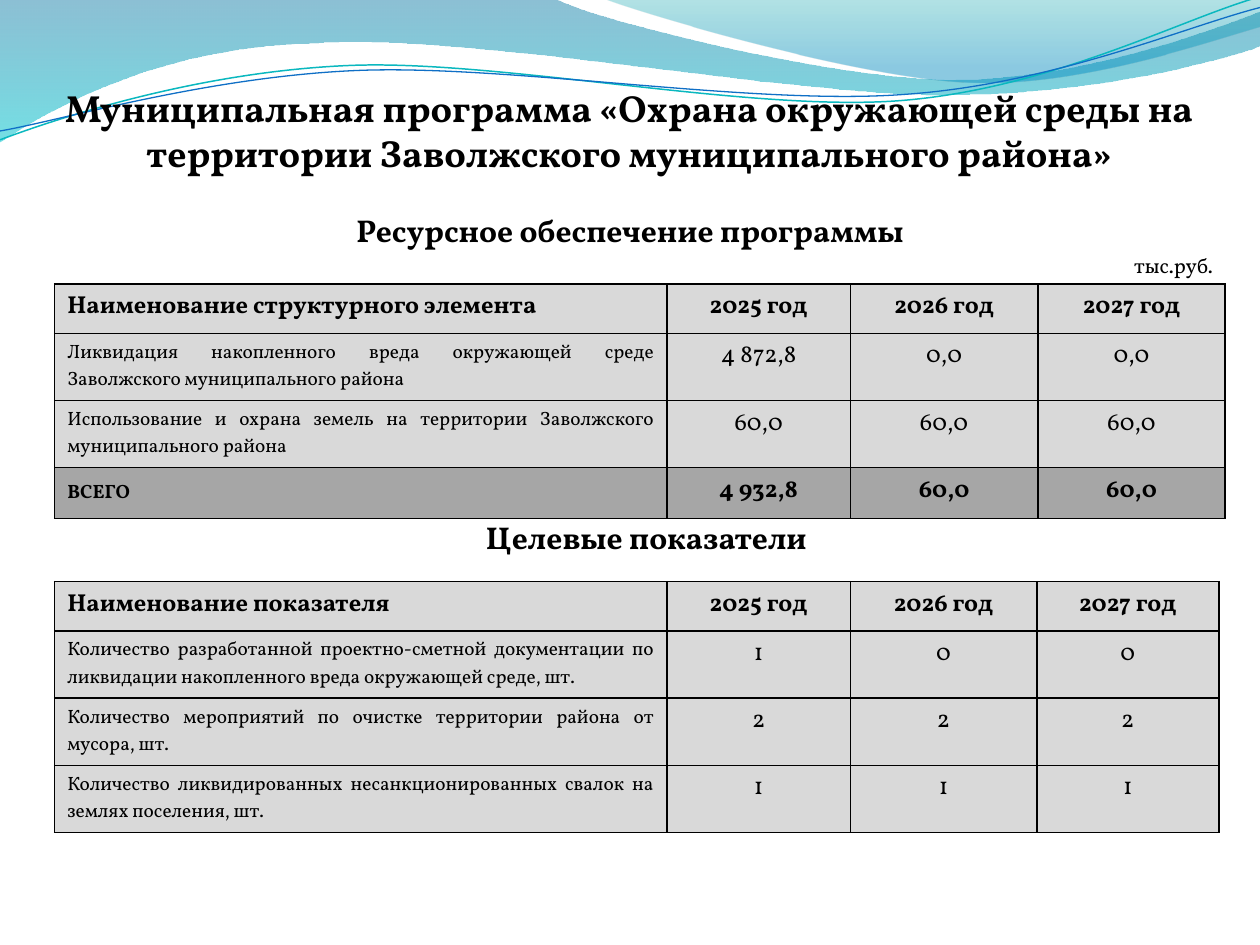
import math

from lxml import etree
from pptx import Presentation
from pptx import util as u
from pptx.dml.color import RGBColor
from pptx.enum import text
from pptx.oxml.ns import qn

COLS, ROWS = 100, 75  # slide grid
FONT, BLACK, GREY, DARK_GREY = "Vollkorn", "000000", "D9D9D9", "A6A6A6"
LEFT, CENTER, RIGHT, JUSTIFY = (text.PP_ALIGN.LEFT, text.PP_ALIGN.CENTER,
                                text.PP_ALIGN.RIGHT, text.PP_ALIGN.JUSTIFY)


def rgb(value):
    return RGBColor.from_string(value)


def sub(parent, tag, **attrs):
    return etree.SubElement(parent, qn(tag), {k: str(v) for k, v in attrs.items()})


def turn(point, center, degrees):
    """Point turned clockwise about a center."""
    a = math.radians(degrees)
    dx, dy = point[0] - center[0], point[1] - center[1]
    return (center[0] + dx * math.cos(a) - dy * math.sin(a),
            center[1] + dx * math.sin(a) + dy * math.cos(a))


class Deck:
    def __init__(self):
        self.prs = Presentation()
        self.prs.slide_width, self.prs.slide_height = u.Inches(10), u.Inches(7.5)
        self.s = self.prs.slides.add_slide(self.prs.slide_layouts[6])

    def x(self, cols):
        return round(self.prs.slide_width * cols / COLS)

    def y(self, rows):
        return round(self.prs.slide_height * rows / ROWS)

    def box(self, left, top, width, height):
        return self.x(left), self.y(top), self.x(width), self.y(height)

    def style(self, p, size, bold=True, align=CENTER):
        p.alignment = align
        f = p.font
        f.name, f.size, f.bold = FONT, u.Pt(size), bold
        f.color.rgb = rgb(BLACK)

    def wave(self, start, *segments, gradient=None, line=None, tilt=0, center=(0, 0)):
        """Two numbers in a segment make a line, six make a curve."""
        def place(seg):
            pairs = [turn(p, center, -tilt) for p in zip(seg[::2], seg[1::2])]
            return [(self.x(a), self.y(b)) for a, b in pairs]

        parts = [place(seg) for seg in segments]
        fb = self.s.shapes.build_freeform(*place(start)[0])
        fb.add_line_segments([part[-1] for part in parts], close=gradient is not None)
        sp = fb.convert_to_shape()
        sp.shadow.inherit = False
        pr = sp._element.spPr
        for step, part in zip(list(pr.iter(qn("a:lnTo"))), parts):
            if len(part) == 3:  # bend the straight step into a curve
                curve = etree.Element(qn("a:cubicBezTo"))
                for a, b in part:
                    sub(curve, "a:pt", x=a - sp.left, y=b - sp.top)
                step.getparent().replace(step, curve)
        sp.rotation = tilt
        sp.fill.background()
        if gradient:
            sp.line.fill.background()
            fill = etree.Element(qn("a:gradFill"), rotWithShape="1")
            stops = sub(fill, "a:gsLst")
            for pos, color, alpha in gradient:
                stop = sub(stops, "a:gs", pos=pos * 1000)
                sub(sub(stop, "a:srgbClr", val=color), "a:alpha", val=alpha * 1000)
            sub(fill, "a:lin", ang=5400000, scaled=0)
            pr.replace(pr.find(qn("a:noFill")), fill)
        else:
            color, width = line
            sp.line.color.rgb, sp.line.width = rgb(color), u.Pt(width)

    def text(self, place, *paragraphs, anchor=text.MSO_ANCHOR.TOP, inset=0.1,
             bottom=0.05, wrap=True):
        tf = self.s.shapes.add_textbox(*self.box(*place)).text_frame
        tf.word_wrap, tf.vertical_anchor = wrap, anchor
        tf.margin_left = tf.margin_right = u.Inches(inset)
        tf.margin_bottom = u.Inches(bottom)
        for i, (words, size, *look) in enumerate(paragraphs):
            p = tf.add_paragraph() if i else tf.paragraphs[0]
            p.text = words
            p.space_before = u.Pt(0.2 * size if i else 0)
            self.style(p, size, *look)

    def table(self, left, top, widths, heights, rows, total=False):
        frame = self.s.shapes.add_table(len(rows), len(widths), *self.box(
            left, top, sum(widths), sum(heights)))
        t = frame.table
        for col, w in zip(t.columns, widths):
            col.width = self.x(w)
        for row, h in zip(t.rows, heights):
            row.height = self.y(h)
        for r, values in enumerate(rows):
            is_total = total and r == len(rows) - 1
            for c, value in enumerate(values):
                cell = t.cell(r, c)
                cell.text = value
                label = c == 0 and r > 0
                align = JUSTIFY if label else CENTER if c else LEFT
                self.style(cell.text_frame.paragraphs[0], 11 if label else 14,
                           r == 0 or is_total, align)
                if label and is_total:
                    cell.vertical_anchor = text.MSO_ANCHOR.MIDDLE
                self.borders(cell)
                cell.fill.solid()
                cell.fill.fore_color.rgb = rgb(DARK_GREY if is_total else GREY)

    def borders(self, cell):
        pr = cell._tc.get_or_add_tcPr()
        for side in ("a:lnL", "a:lnR", "a:lnT", "a:lnB"):
            ln = sub(pr, side, w=u.Pt(1))
            sub(sub(ln, "a:solidFill"), "a:srgbClr", val=BLACK)


def main():
    d = Deck()

    # Waves along the top
    d.wave((0, 0), (44, -0.1), (47.6, 1.7, 66.4, 6.3, 75.8, 6.3),
           (85.3, 6.3, 95.8, 2.6, 100, 0.9), (100.1, 3.6),
           (98.3, 4.4, 87, 7.6, 74.6, 7.5), (62.2, 7.5, 38.2, 2.8, 25.7, 3.4),
           (12.9, 3.6, 4.6, 8.3, -0.1, 11.3),
           gradient=[(0, "0074A1", 45), (100, "00C6CF", 55)])
    d.wave((47.9, -0.1), (50.9, 1.1, 68.2, 6.2, 76.9, 6.5),
           (85.6, 6.9, 96.1, 3.2, 100, 2.1), (100, 0),
           gradient=[(0, "00A1A9", 30), (80, "008BBF", 45)])
    d.wave((0, 11.1), (4.8, 9.3, 15.8, 5.7, 27.7, 5.2),
           (39.5, 4.7, 59.3, 8.9, 71.3, 8), (83.3, 7.1, 93.8, 1.5, 99.8, -0.2),
           line=("0AB8BF", 0.85), tilt=357.3, center=(49.9, 5.7))
    d.wave((0, 10.4), (4.7, 9.6, 16.4, 6.1, 28.3, 5.6),
           (40.3, 5.1, 59.7, 8.4, 71.7, 7.5), (83.6, 6.7, 94.1, 2.1, 100, 0.6),
           line=("0F6FC6", 0.75), tilt=357.3, center=(50, 5.9))

    # Headings
    d.text((5.1, 2.9, 89.7, 11),
           ("Муниципальная программа «Охрана окружающей среды на территории "
            "Заволжского муниципального района»", 21.6),
           anchor=text.MSO_ANCHOR.BOTTOM, inset=0, bottom=0)
    d.text((2.75, 16.25, 94.5, 28.3), ("Ресурсное обеспечение программы", 18),
           ("тыс.руб.", 12, False, RIGHT))

    # Funding and target tables
    years = ["2025 год", "2026 год", "2027 год"]
    d.table(4.34, 22.54, [48.6, 14.55, 14.9, 14.85], [3.92, 5.33, 5.33, 4.05], [
        ["Наименование структурного элемента", *years],
        ["Ликвидация накопленного вреда окружающей среде Заволжского "
         "муниципального района", "4 872,8", "0,0", "0,0"],
        ["Использование и охрана земель на территории Заволжского "
         "муниципального района", "60,0", "60,0", "60,0"],
        ["ВСЕГО", "4 932,8", "60,0", "60,0"]], total=True)
    d.table(4.34, 46.17, [48.6, 14.55, 14.8, 14.45], [3.92, 5.33, 5.33, 5.33], [
        ["Наименование показателя", *years],
        ["Количество разработанной проектно-сметной документации по ликвидации "
         "накопленного вреда окружающей среде, шт.", "1", "0", "0"],
        ["Количество мероприятий по очистке территории района от мусора, шт.",
         "2", "2", "2"],
        ["Количество ликвидированных несанкционированных свалок на землях "
         "поселения, шт.", "1", "1", "1"]])
    d.text((37.4, 40.6, 27.8, 4), ("Целевые показатели", 18), wrap=False)

    d.prs.save("out.pptx")


if __name__ == "__main__":
    main()
